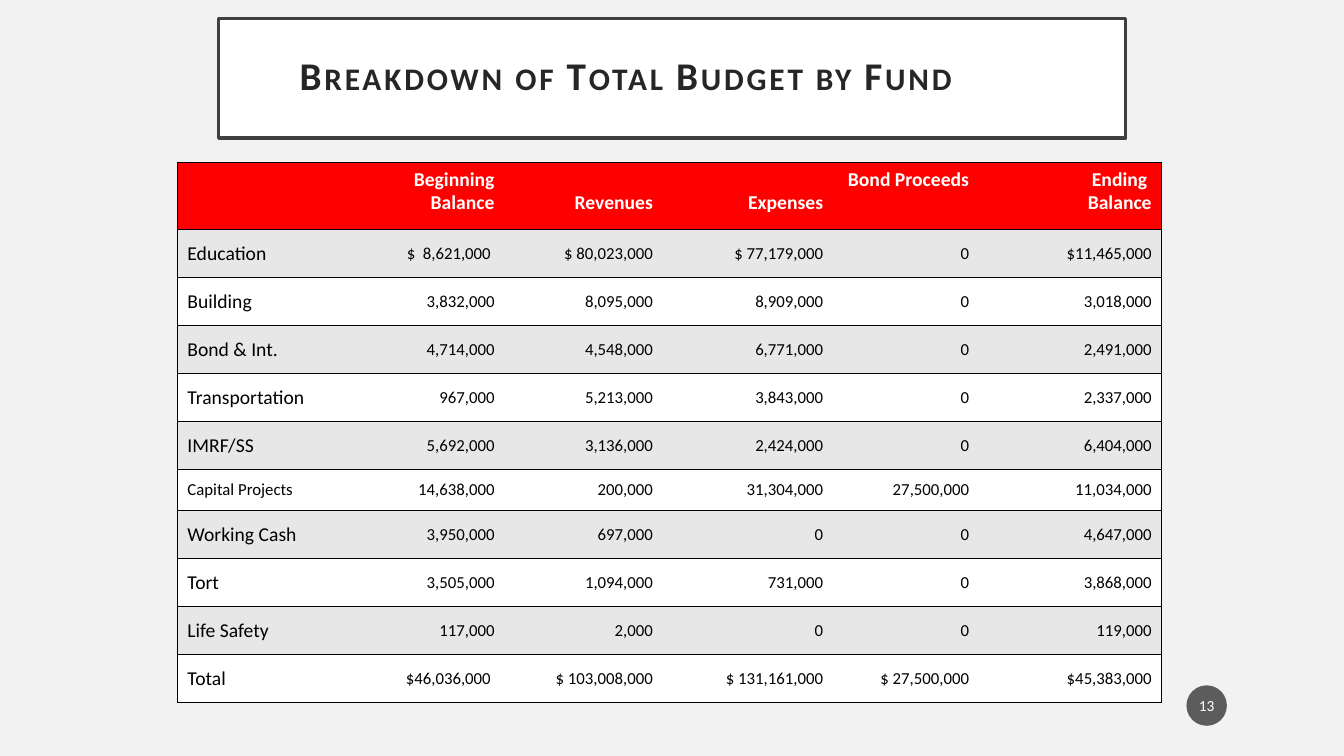
from pptx import Presentation
from pptx.dml.color import RGBColor
from pptx.enum.shapes import MSO_SHAPE
from pptx.enum.text import MSO_ANCHOR as ANCHOR, MSO_AUTO_SIZE, PP_ALIGN as ALIGN
from pptx.oxml.ns import qn
from pptx.util import Cm, Pt
from lxml.etree import SubElement

COLORS = {
    "background": "F2F2F2", "white": "FFFFFF", "black": "000000",
    "frame": "404040", "title": "262626", "header": "FF0000",
    "band": "E7E7E7", "badge": "1D1D1D",
}
NO_STYLE = "{2D5ABB26-0587-4C30-8999-92F81FD0307C}"

HEADER = ["", "Beginning Balance", "Revenues", "Expenses", "Bond Proceeds", "Ending \nBalance"]
FUNDS = [
    ["Education", "$  8,621,000 ", "$ 80,023,000", "$ 77,179,000", "0", "$11,465,000"],
    ["Building", "3,832,000", "8,095,000", "8,909,000", "0", "3,018,000"],
    ["Bond & Int.", "4,714,000", "4,548,000", "6,771,000", "0", "2,491,000"],
    ["Transportation", "967,000", "5,213,000", "3,843,000", "0", "2,337,000"],
    ["IMRF/SS", "5,692,000", "3,136,000", "2,424,000", "0", "6,404,000"],
    ["Capital Projects", "14,638,000", "200,000", "31,304,000", "27,500,000", "11,034,000"],
    ["Working Cash", "3,950,000", "697,000", "0", "0", "4,647,000"],
    ["Tort", "3,505,000", "1,094,000", "731,000", "0", "3,868,000"],
    ["Life Safety", "117,000", "2,000", "0", "0", "119,000"],
    ["Total", "$46,036,000 ", "$ 103,008,000", "$ 131,161,000", "$ 27,500,000", "$45,383,000"],
]
COL_WIDTHS = [4.52, 3.73, 3.99, 4.29, 3.68, 4.6]
HEADER_HEIGHT, ROW_HEIGHT, SMALL_ROW_HEIGHT = 1.69, 1.21, 1.04


def rgb(name):
    return RGBColor.from_string(COLORS[name])


def style(p, size, color, bold=False, align=ALIGN.CENTER):
    p.alignment = align
    p.font.name = "Calibri"
    p.font.size = Pt(size)
    p.font.bold = bold
    p.font.color.rgb = rgb(color)


prs = Presentation()
prs.slide_width, prs.slide_height = Cm(33.87), Cm(19.05)
s = prs.slides.add_slide(prs.slide_layouts[5])
s.background.fill.solid()
s.background.fill.fore_color.rgb = rgb("background")

# Framed title
title = s.shapes.title
title.left, title.top, title.width, title.height = Cm(5.51), Cm(0.46), Cm(22.86), Cm(3.02)
title.fill.solid()
title.fill.fore_color.rgb = rgb("white")
title.line.color.rgb = rgb("frame")
title.line.width = Pt(2.5)
tf = title.text_frame
tf.text = "Breakdown of Total Budget by Fund"
tf.auto_size = MSO_AUTO_SIZE.NONE
tf.vertical_anchor = ANCHOR.MIDDLE
tf.margin_left = tf.margin_right = tf.margin_top = tf.margin_bottom = Cm(0.51)
p = tf.paragraphs[0]
style(p, 28, "title", bold=True)
p.line_spacing = 0.9
r_pr = p.runs[0].font._element
r_pr.set("cap", "small")
r_pr.set("spc", "200")

# Budget table
rows = [HEADER] + FUNDS
heights = [HEADER_HEIGHT] + [SMALL_ROW_HEIGHT if fund[0] == "Capital Projects" else ROW_HEIGHT
                             for fund in FUNDS]
frame = s.shapes.add_table(len(rows), len(HEADER), Cm(4.47), Cm(4.09),
                           Cm(sum(COL_WIDTHS)), Cm(sum(heights)))
table = frame.table
table._tbl.tblPr.find(qn("a:tableStyleId")).text = NO_STYLE
for column, width in zip(table.columns, COL_WIDTHS):
    column.width = Cm(width)
for row, height in zip(table.rows, heights):
    row.height = Cm(height)

for i, values in enumerate(rows):
    for j, value in enumerate(values):
        cell = table.cell(i, j)
        cell.text = value

        # Rules between rows, and an outer edge left and right
        sides = ["lnL"] * (j == 0) + ["lnR"] * (j == len(values) - 1) + ["lnT", "lnB"]
        for side in sides:
            ln = SubElement(cell._tc.get_or_add_tcPr(), qn(f"a:{side}"), w=str(Pt(1)))
            SubElement(SubElement(ln, qn("a:solidFill")), qn("a:srgbClr"), val=COLORS["black"])
        cell.fill.solid()
        cell.fill.fore_color.rgb = rgb("header" if i == 0 else "band" if i % 2 else "white")

        cell.vertical_anchor = ANCHOR.MIDDLE if i else ANCHOR.TOP
        if value in ("Revenues", "Expenses"):
            cell.margin_top = Cm(0.73)  # level with the second header line
        large = i == 0 or (j == 0 and value != "Capital Projects")
        for p in cell.text_frame.paragraphs:
            style(p, 14 if large else 12, "black" if i else "white", bold=i == 0,
                  align=ALIGN.RIGHT if j else ALIGN.LEFT)

# Page number badge
badge = s.shapes.add_shape(MSO_SHAPE.OVAL, Cm(29.9), Cm(17.27), Cm(1.02), Cm(1.02))
badge.shadow.inherit = False
badge.fill.solid()
badge.fill.fore_color.rgb = rgb("badge")
SubElement(badge._element.spPr.find(".//" + qn("a:srgbClr")), qn("a:alpha"), val="70000")
badge.line.fill.background()
tf = badge.text_frame
tf.text = "13"
tf.margin_left = tf.margin_right = Cm(0.05)
tf.vertical_anchor = ANCHOR.MIDDLE
style(tf.paragraphs[0], 11, "white")

prs.save("out.pptx")
